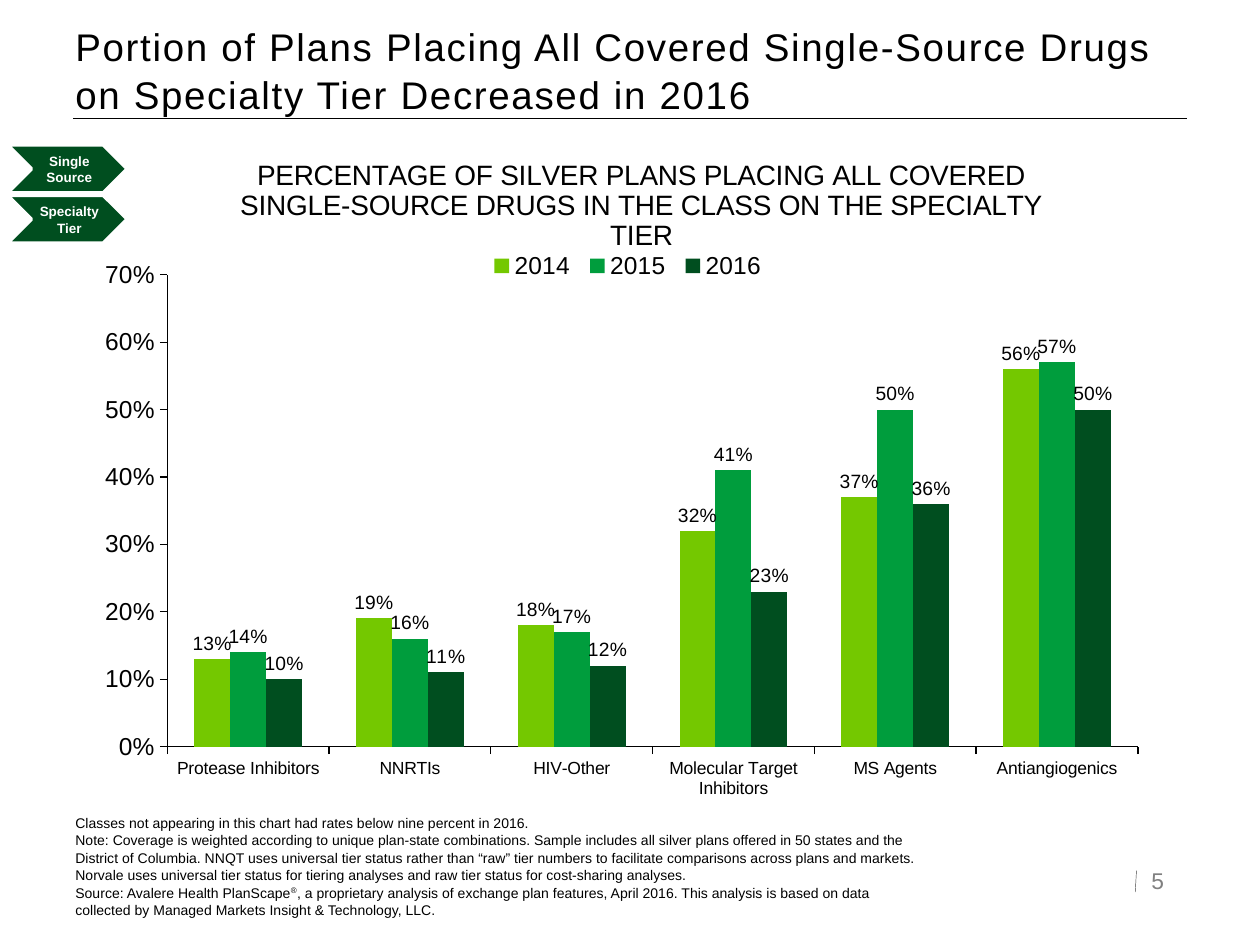
from dataclasses import dataclass, field
from typing import Any

from lxml.etree import SubElement
from pptx import Presentation
from pptx.chart.data import CategoryChartData as ChartData
from pptx.dml.color import RGBColor
from pptx.enum.chart import XL_CHART_TYPE as Kind
from pptx.enum.chart import XL_LABEL_POSITION as Spot
from pptx.enum.chart import XL_LEGEND_POSITION as Side
from pptx.enum.chart import XL_TICK_MARK as Tick
from pptx.enum.shapes import MSO_CONNECTOR as Link
from pptx.enum.shapes import MSO_SHAPE as Form
from pptx.enum.text import MSO_ANCHOR as Anchor
from pptx.enum.text import PP_ALIGN as Align
from pptx.oxml.ns import qn
from pptx.util import Inches, Pt

BLACK = RGBColor(0, 0, 0)
WHITE = RGBColor(255, 255, 255)
GRAY = RGBColor(128, 128, 128)
DARK = RGBColor(64, 64, 64)
LIME = RGBColor(0x74, 0xC8, 0x00)
GREEN = RGBColor(0x00, 0x9D, 0x3D)
PINE = RGBColor(0x00, 0x4E, 0x1F)
COLS, ROWS, CELL = 100, 75, Inches(0.1)
FACE = "Arial"


@dataclass
class Box:
    """A place on the grid, in columns and rows."""
    col: float
    row: float
    wide: float
    high: float

    def span(self) -> list[int]:
        """Return left, top, width and height."""
        return [round(n * CELL) for n in (self.col, self.row, self.wide, self.high)]


@dataclass
class Text:
    """A block of text with its format."""
    box: Box
    lines: list[str]
    font: dict[str, Any]
    anchor: Any = Anchor.TOP
    align: Any = Align.LEFT
    pads: tuple = (0.1, 0.05, 0.1, 0.05)
    track: int = 0


@dataclass
class Rule:
    """A straight line on the grid."""
    ends: tuple
    color: RGBColor
    width: float


@dataclass
class Year:
    """One series of the chart."""
    name: str
    color: RGBColor
    vals: list[float] = field(default_factory=list)


def style(item: Any, form: dict[str, Any]) -> None:
    """Set each attribute of the dict on the item."""
    for key, val in form.items():
        setattr(item, key, val)


def ink(font: Any, size: float, color: RGBColor = BLACK, bold: bool = False) -> None:
    """Give a font its face, size and colour."""
    style(font, {"name": FACE, "size": Pt(size), "bold": bold})
    font.color.rgb = color


def write(slide: Any, text: Text) -> None:
    """Draw a text block, raising any registered sign."""
    frame = slide.shapes.add_textbox(*text.box.span()).text_frame
    sides = ("margin_left", "margin_top", "margin_right", "margin_bottom")
    style(frame, dict(zip(sides, map(Inches, text.pads))))
    style(frame, {"word_wrap": True, "vertical_anchor": text.anchor})
    for i, line in enumerate(text.lines):
        para = frame.paragraphs[0] if i == 0 else frame.add_paragraph()
        style(para, {"alignment": text.align, "line_spacing": 1.04})
        head, sign, tail = line.partition("®")
        for part in filter(None, (head, sign, tail)):
            run = para.add_run()
            run.text = part
            ink(run.font, **text.font)
            props = run.font._element
            if part == "®":
                props.set("baseline", "30000")
            if text.track:
                props.set("spc", str(text.track))


def rule(slide: Any, line: Rule) -> None:
    """Draw a straight line."""
    ends = [round(n * CELL) for n in line.ends]
    link = slide.shapes.add_connector(Link.STRAIGHT, *ends)
    link.line.color.rgb = line.color
    link.line.width = Pt(line.width)
    SubElement(link._element.spPr, qn("a:effectLst"))


def badge(slide: Any, row: float, label: str) -> None:
    """Draw a chevron and its label."""
    form = slide.shapes.add_shape(Form.CHEVRON, *Box(0.6, row, 9.5, 3.8).span())
    form.shadow.inherit = False
    form.fill.solid()
    form.fill.fore_color.rgb = PINE
    form.line.color.rgb = WHITE
    form.line.width = Pt(2)
    write(slide, Text(Box(2.5, row, 5.7, 3.8), [label],
                      {"size": 7.7, "color": WHITE, "bold": True},
                      Anchor.MIDDLE, Align.CENTER, (0.04, 0.01, 0.01, 0.01)))


def place(elem: Any, index: int, inner: bool = False, **share: float) -> None:
    """Give a chart part a manual layout in shares of the chart."""
    for old in elem.findall(qn("c:layout")):
        elem.remove(old)
    node = SubElement(elem, qn("c:layout"))
    elem.insert(index, node)
    hand = SubElement(node, qn("c:manualLayout"))
    marks = {"layoutTarget": "inner"} if inner else {}
    marks |= {"xMode": "edge", "yMode": "edge"} | share
    for key, val in marks.items():
        SubElement(hand, qn(f"c:{key}")).set("val", str(val))


def graph(slide: Any, box: Box, title: str, cats: list[str], years: list[Year]) -> None:
    """Draw the column chart."""
    data = ChartData(number_format="0%")
    data.categories = cats
    for year in years:
        data.add_series(year.name, year.vals)
    chart = slide.shapes.add_chart(Kind.COLUMN_CLUSTERED, *box.span(), data).chart
    ink(chart.font, 18)
    head = chart.chart_title
    head.text_frame.text = title
    ink(head.text_frame.paragraphs[0].runs[0].font, 16)
    head.include_in_layout = False
    place(head._element, 1, x=0.16, y=0.01)

    chart.has_legend = True
    style(chart.legend, {"position": Side.TOP, "include_in_layout": False})
    ink(chart.legend.font, 14)
    place(chart.legend._element, 1, x=0.39, y=0.15, w=0.27, h=0.05)

    plot = chart.plots[0]
    style(plot, {"gap_width": 150, "overlap": 0, "vary_by_categories": False})
    for bars, year in zip(plot.series, years):
        bars.format.fill.solid()
        bars.format.fill.fore_color.rgb = year.color
        tags = bars.data_labels
        style(tags, {"show_value": True, "position": Spot.OUTSIDE_END,
                     "number_format": "0%", "number_format_is_linked": False})
        ink(tags.font, 11)

    for axis, size in ((chart.category_axis, 10), (chart.value_axis, 14)):
        style(axis, {"major_tick_mark": Tick.OUTSIDE, "minor_tick_mark": Tick.NONE,
                     "has_major_gridlines": False})
        ink(axis.tick_labels.font, size)
        axis.format.line.color.rgb = BLACK
        axis.format.line.width = Pt(0.75)
    style(chart.value_axis, {"minimum_scale": 0, "maximum_scale": 0.7, "major_unit": 0.1})
    style(chart.value_axis.tick_labels, {"number_format": "0%", "number_format_is_linked": False})
    area = chart._chartSpace.chart.plotArea
    place(area, 0, True, x=0.097, y=0.188, w=0.902, h=0.682)


def main() -> None:
    """Build and save the slide."""
    deck = Presentation()
    style(deck, {"slide_width": COLS * CELL, "slide_height": ROWS * CELL})
    slide = deck.slides.add_slide(deck.slide_layouts[6])
    for line in (Rule((90.2, 69.1, 90.1, 70.8), DARK, 0.25),
                 Rule((5.8, 9.4, 94.2, 9.4), BLACK, 0.75)):
        rule(slide, line)
    write(slide, Text(Box(90.4, 67.8, 5.8, 4), ["5"],
                      {"size": 13, "color": GRAY}, Anchor.MIDDLE))
    write(slide, Text(Box(5, 4.9, 89, 4.9), [
        "Portion of Plans Placing All Covered Single-Source Drugs "
        "on Specialty Tier Decreased in 2016"], {"size": 22}, Anchor.BOTTOM, track=100))
    graph(slide, Box(5, 11.5, 85.4, 54.9),
          "PERCENTAGE OF SILVER PLANS PLACING ALL COVERED "
          "SINGLE-SOURCE DRUGS IN THE CLASS ON THE SPECIALTY TIER",
          ["Protease Inhibitors", "NNRTIs", "HIV-Other",
           "Molecular Target Inhibitors", "MS Agents", "Antiangiogenics"],
          [Year("2014", LIME, [0.13, 0.19, 0.18, 0.32, 0.37, 0.56]),
           Year("2015", GREEN, [0.14, 0.16, 0.17, 0.41, 0.5, 0.57]),
           Year("2016", PINE, [0.1, 0.11, 0.12, 0.23, 0.36, 0.5])])
    write(slide, Text(Box(5, 64.1, 69.7, 7.6), [
        "Classes not appearing in this chart had rates below nine percent in 2016.",
        "Note: Coverage is weighted according to unique plan-state combinations. Sample "
        "includes all silver plans offered in 50 states and the District of Columbia. NNQT "
        "uses universal tier status rather than “raw” tier numbers to facilitate comparisons "
        "across plans and markets. Norvale uses universal tier status for tiering analyses "
        "and raw tier status for cost-sharing analyses.",
        "Source: Avalere Health PlanScape®, a proprietary analysis of exchange plan features, "
        "April 2016. This analysis is based on data collected by Managed Markets Insight & "
        "Technology, LLC."], {"size": 8}))
    for i, label in enumerate(("Single Source", "Specialty Tier")):
        badge(slide, 11.5 + 4 * i, label)
    deck.save("out.pptx")


if __name__ == "__main__":
    main()
